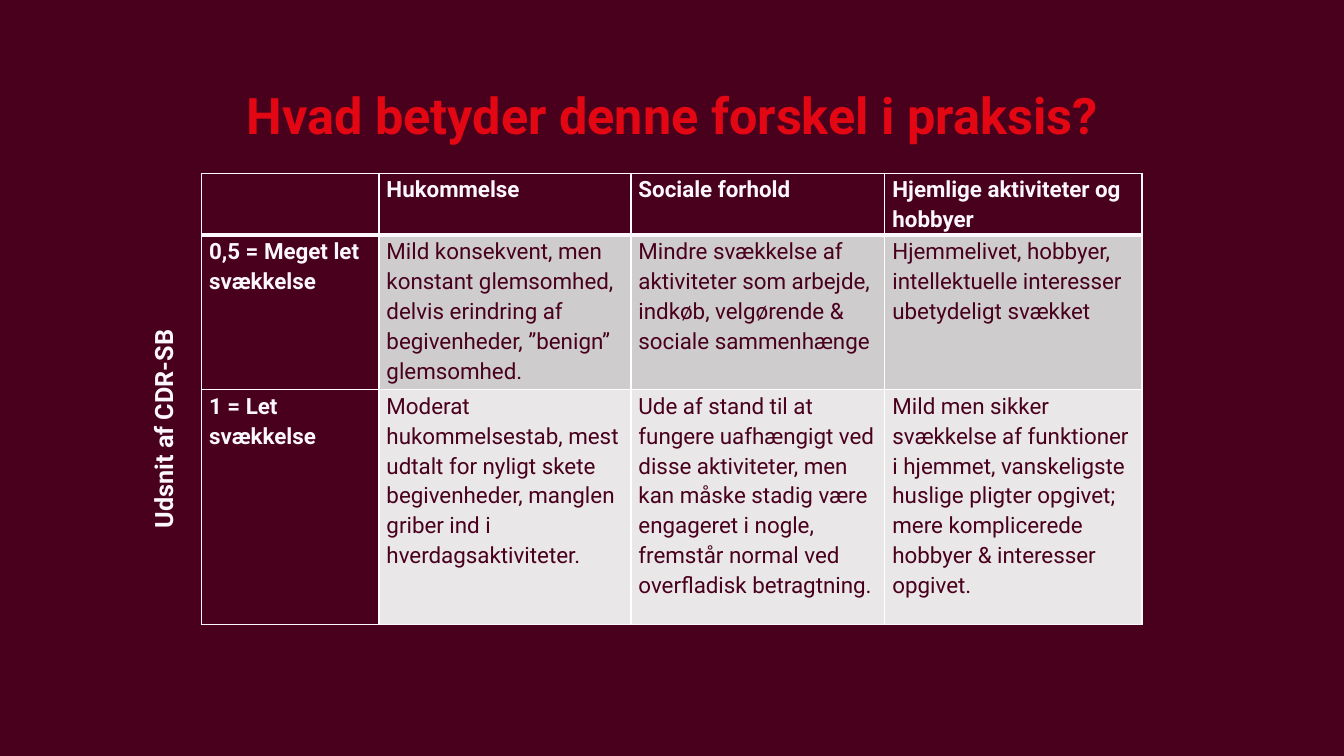
from lxml.etree import SubElement as Sub
from pptx import Presentation as Deck
from pptx.dml.color import RGBColor as RGB
from pptx.enum.text import MSO_ANCHOR as Anchor, PP_ALIGN as Align
from pptx.oxml.ns import qn
from pptx.util import Cm, Pt

WINE, RED, PALE = "48001D", "E30613", "FBF7FB"
BANDS = [WINE, "CFCCCD", "E9E7E8"]
COLS = [4.47, 6.35, 6.4, 6.48]
ROWS = [1.47, 3.45, 5.92]
CELLS = [
    ["", "Hukommelse", "Sociale forhold", "Hjemlige aktiviteter og hobbyer"],
    ["0,5 = Meget let svækkelse",
     "Mild konsekvent, men konstant glemsomhed, delvis erindring af "
     "begivenheder, ”benign” glemsomhed.",
     "Mindre svækkelse af aktiviteter som arbejde, indkøb, velgørende & "
     "sociale sammenhænge",
     "Hjemmelivet, hobbyer, intellektuelle interesser ubetydeligt svækket"],
    ["1 = Let svækkelse",
     "Moderat hukommelsestab, mest udtalt for nyligt skete begivenheder, "
     "manglen griber ind i hverdagsaktiviteter.",
     "Ude af stand til at fungere uafhængigt ved disse aktiviteter, men kan "
     "måske stadig være engageret i nogle, fremstår normal ved overfladisk "
     "betragtning.",
     "Mild men sikker svækkelse af funktioner i hjemmet, vanskeligste huslige "
     "pligter opgivet; mere komplicerede hobbyer & interesser opgivet."],
]


def color(code):
    return RGB.from_string(code)


class Page:
    font = "Roboto"

    def __init__(self, deck):
        self.slide = deck.slides.add_slide(deck.slide_layouts[6])
        back = self.slide.background.fill
        back.solid()
        back.fore_color.rgb = color(WINE)

    def run(self, para, text, size, tint, bold=True):
        run = para.add_run()
        run.text = text
        font = run.font
        font.name, font.size, font.bold = self.font, Pt(size), bold
        font.color.rgb = color(tint)

    def text(self, area, text, size, tint, align=Align.LEFT, space=1.0,
             anchor=Anchor.TOP, turn=0):
        box = self.slide.shapes.add_textbox(*map(Cm, area))
        box.rotation = turn
        frame = box.text_frame
        frame.word_wrap, frame.vertical_anchor = True, anchor
        frame.margin_left = frame.margin_right = 0
        frame.margin_top = frame.margin_bottom = 0
        para = frame.paragraphs[0]
        para.alignment, para.line_spacing = align, space
        self.run(para, text, size, tint)

    def border(self, cell, side, width):
        line = Sub(cell._tc.get_or_add_tcPr(), qn("a:ln" + side),
                   w=str(Pt(width)))
        fill = Sub(line, qn("a:solidFill"))
        Sub(fill, qn("a:srgbClr"), val=PALE)

    def cell(self, cell, text, row, col):
        head = row == 0 or col == 0
        cell.margin_left = cell.margin_right = Cm(0.19)
        cell.margin_top = cell.margin_bottom = 0
        # Shared edges are set once; the rule under the header is heavier
        if col == 0:
            self.border(cell, "L", 1)
        self.border(cell, "R", 1)
        if row == 0:
            self.border(cell, "T", 1)
        self.border(cell, "B", 3 if row == 0 else 1)
        cell.fill.solid()
        cell.fill.fore_color.rgb = color(WINE if head else BANDS[row])
        if text:
            para = cell.text_frame.paragraphs[0]
            para.line_spacing, para.space_after = 1.15, Pt(8)
            self.run(para, text, 16, PALE if head else WINE, head)

    def table(self, left, top, cols, rows, cells):
        table = self.slide.shapes.add_table(
            len(rows), len(cols), Cm(left), Cm(top),
            Cm(sum(cols)), Cm(sum(rows))).table
        for col, width in zip(table.columns, cols):
            col.width = Cm(width)
        for row, height in zip(table.rows, rows):
            row.height = Cm(height)
        for r, line in enumerate(cells):
            for c, text in enumerate(line):
                self.cell(table.cell(r, c), text, r, c)


def main():
    deck = Deck()
    deck.slide_width, deck.slide_height = Cm(33.87), Cm(19.05)
    page = Page(deck)

    # Title
    page.text((2.34, 1.19, 29.21, 3.68), "Hvad betyder denne forskel i praksis?",
              36, RED, Align.CENTER, 0.8, Anchor.MIDDLE)

    # Rating table
    page.table(5.08, 4.37, COLS, ROWS, CELLS)

    # Side label, reading upwards
    page.text((1.51, 10.33, 5.2, 0.76), "Udsnit af CDR-SB", 18, PALE, turn=270)

    deck.save("out.pptx")


if __name__ == "__main__":
    main()
